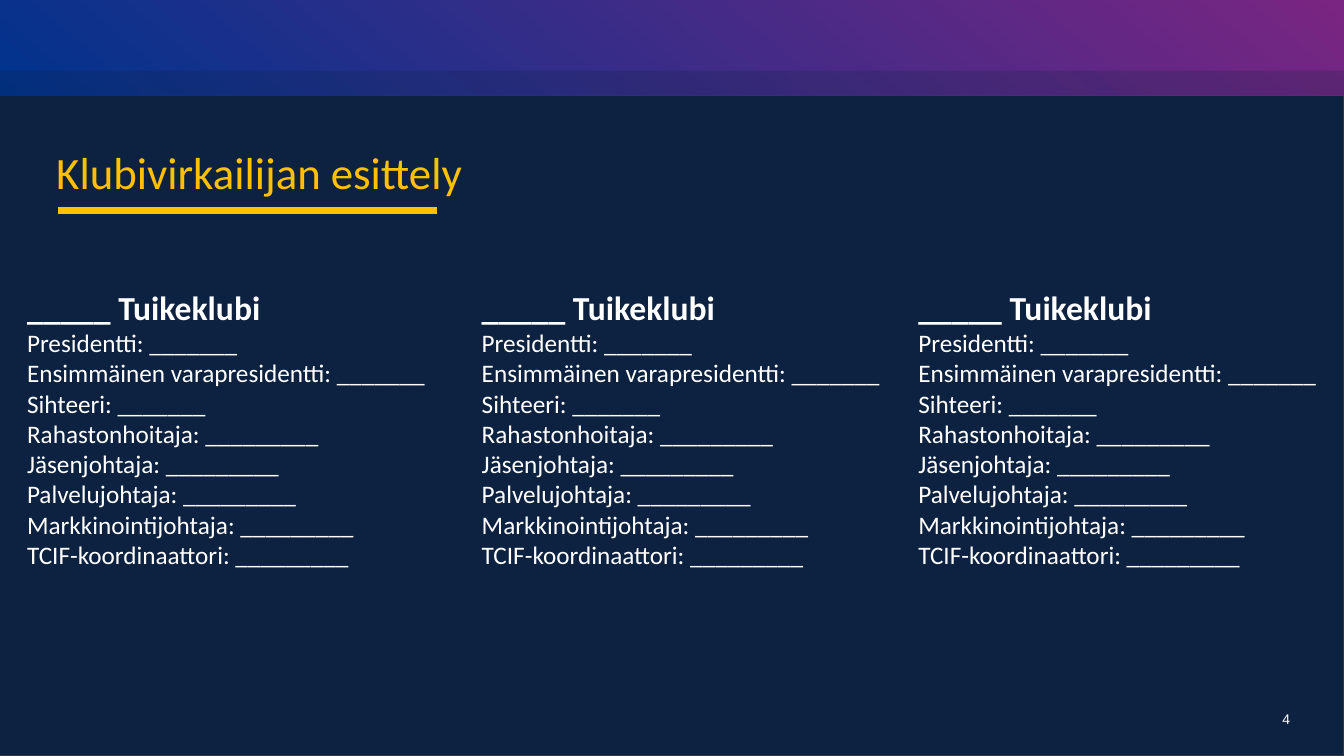
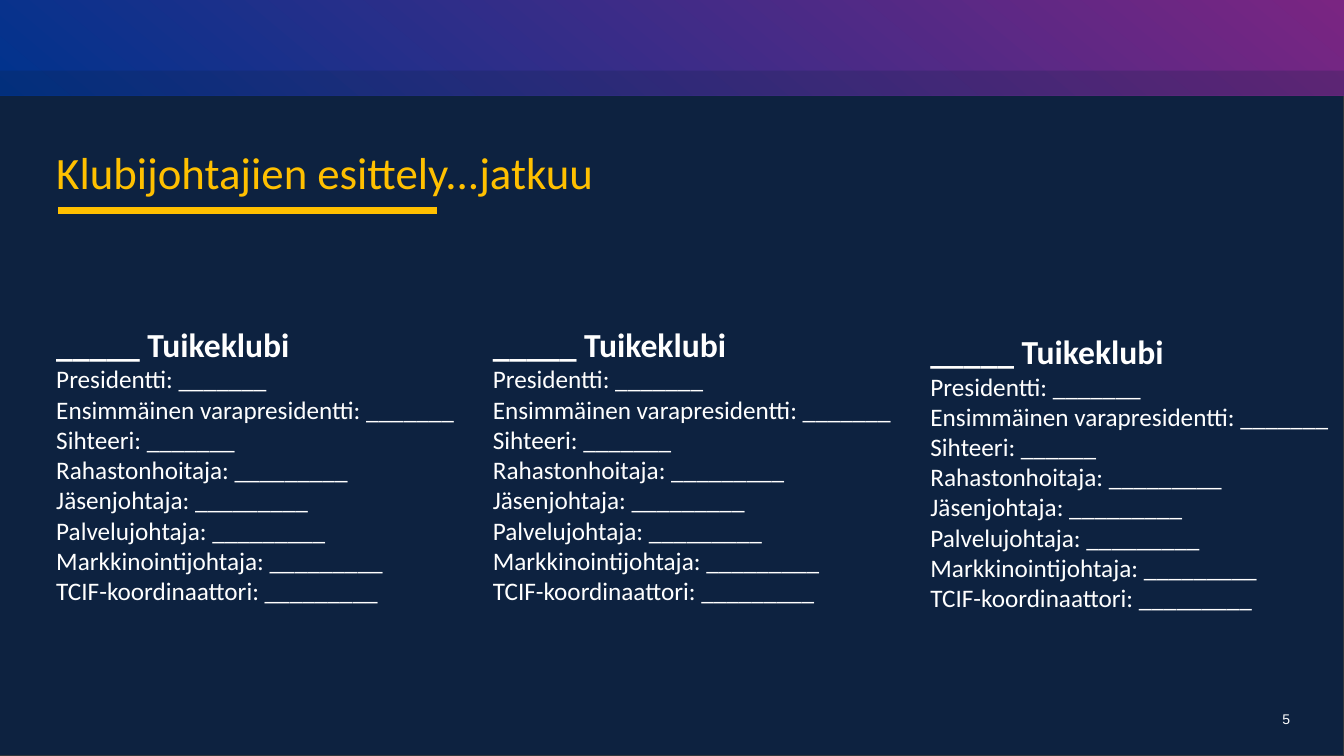
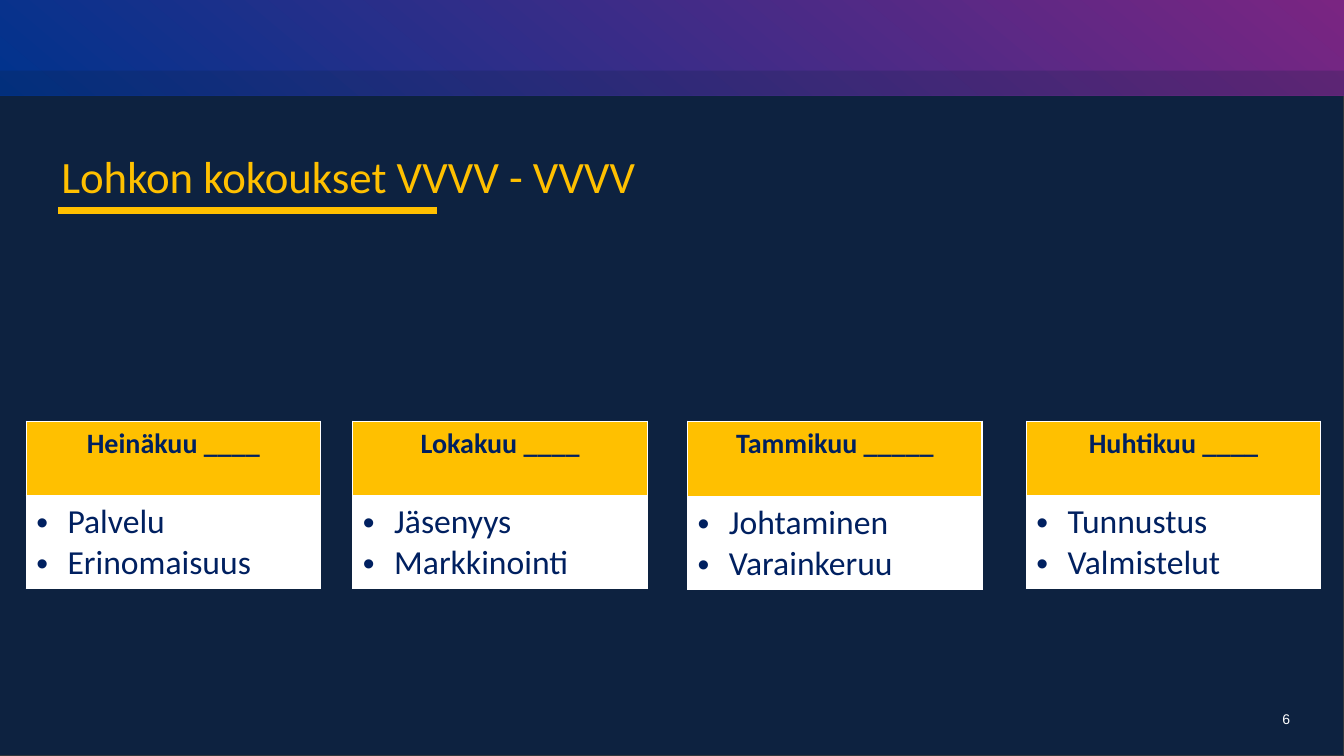
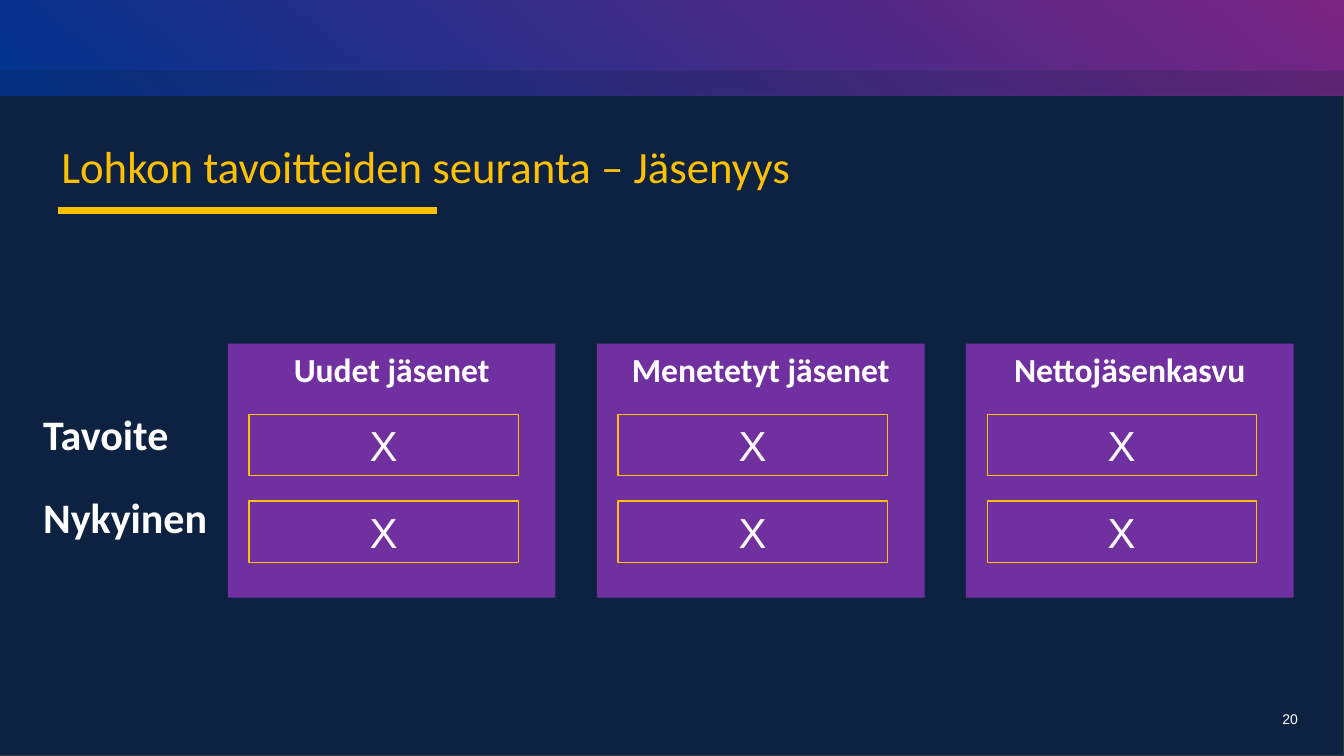
from dataclasses import dataclass
from typing import Optional

from lxml import etree
from pptx import Presentation
from pptx.dml.color import RGBColor
from pptx.enum.shapes import MSO_CONNECTOR, MSO_SHAPE
from pptx.enum.text import MSO_ANCHOR, MSO_AUTO_SIZE, PP_ALIGN
from pptx.oxml.ns import qn
from pptx.util import Pt

RECT = MSO_SHAPE.RECTANGLE
STRAIGHT = MSO_CONNECTOR.STRAIGHT
TOP, MIDDLE = MSO_ANCHOR.TOP, MSO_ANCHOR.MIDDLE
FIT = MSO_AUTO_SIZE.SHAPE_TO_FIT_TEXT
NO_FIT = MSO_AUTO_SIZE.NONE
LEFT, CENTER = PP_ALIGN.LEFT, PP_ALIGN.CENTER

PX = 9144
SLIDE_W, SLIDE_H = 1333, 750
NAVY, EDGE, BLUE, PLUM = "0D2240", "33373B", "00338D", "7A2582"
GOLD, WHITE, INK, PURPLE = "FFC000", "FFFFFF", "002060", "7030A0"
SANS, BODY = "Arial", "Calibri"

CLUB = "_____ Tuikeklubi"
ROSTER_W, ROSTER_H = 417, 293
CARD_TOP, CARD_W, CARD_BODY_H = 418, 292, 91
PANEL_LEFT, PANEL_TOP, PANEL_W, PANEL_H, PANEL_STEP = 226, 341, 325, 252, 366
GOAL_TOP, GOAL_STEP, LABEL_OFFSET = 411, 86, -11
GOAL_INSET, GOAL_W, GOAL_H = 21, 267, 61


@dataclass
class Style:
    size: int
    color: str = WHITE
    font: str = BODY
    bold: bool = False
    align: PP_ALIGN = LEFT


@dataclass
class Box:
    left: int
    top: int
    width: int
    height: int

    def emu(self) -> list[int]:
        return [px(v) for v in (self.left, self.top, self.width, self.height)]


@dataclass
class Roster:
    left: int
    top: int
    secretary_blanks: int = 7


@dataclass
class Meeting:
    left: int
    month: str
    topics: tuple[str, ...]
    header_height: int = 75


TITLE = Style(32, GOLD)
NUMBER = Style(10, font=SANS)
CLUB_NAME = Style(24, bold=True)
OFFICER = Style(18)
MONTH = Style(20, INK, bold=True, align=CENTER)
TOPIC = Style(24, INK)
GOAL_LABEL = Style(30, bold=True)
PANEL_HEAD = Style(24, bold=True, align=CENTER)
GOAL_VALUE = Style(30, font=SANS, align=CENTER)

MEETINGS = (
    Meeting(26, "Heinäkuu ____", ("Palvelu", "Erinomaisuus")),
    Meeting(350, "Lokakuu ____", ("Jäsenyys", "Markkinointi")),
    Meeting(682, "Tammikuu _____", ("Johtaminen", "Varainkeruu"), 76),
    Meeting(1018, "Huhtikuu ____", ("Tunnustus", "Valmistelut")),
)
GOALS = ("Tavoite", "Nykyinen")
PANELS = ("Uudet jäsenet", "Menetetyt jäsenet", "Nettojäsenkasvu")


def px(value: int) -> int:
    return value * PX


def rgb(color: str) -> RGBColor:
    return RGBColor.from_string(color)


def write(tf, lines: list[tuple[str, Style]]) -> None:
    tf.text = "\n".join(text for text, _ in lines)
    for p, (_, style) in zip(tf.paragraphs, lines):
        p.alignment = style.align
        for r in p.runs:
            r.font.size = Pt(style.size)
            r.font.name = style.font
            r.font.bold = style.bold
            r.font.color.rgb = rgb(style.color)


def add_text(slide, box: Box, *lines: tuple[str, Style], fit=FIT) -> None:
    tf = slide.shapes.add_textbox(*box.emu()).text_frame
    tf.word_wrap = True
    tf.auto_size = fit
    write(tf, list(lines))


def add_rect(slide, box: Box, fill: Optional[str] = None,
             line: Optional[str] = None):
    sp = slide.shapes.add_shape(RECT, *box.emu())
    sp.shadow.inherit = False
    if fill:
        sp.fill.solid()
        sp.fill.fore_color.rgb = rgb(fill)
    else:
        sp.fill.background()
    if line:
        sp.line.color.rgb = rgb(line)
        sp.line.width = Pt(0.75)
    else:
        sp.line.fill.background()
    return sp


def add_rect_text(slide, box: Box, text: str, style: Style, anchor,
                  fill: Optional[str] = None,
                  line: Optional[str] = None) -> None:
    tf = add_rect(slide, box, fill, line).text_frame
    tf.word_wrap = True
    tf.vertical_anchor = anchor
    write(tf, [(text, style)])


def add_band(slide) -> None:
    sp = add_rect(slide, Box(0, 0, SLIDE_W, 95))
    sp.fill.gradient()
    sp.fill.gradient_angle = 50
    for stop, position, color in zip(sp.fill.gradient_stops, (0, 1), (BLUE, PLUM)):
        stop.position = position
        stop.color.rgb = rgb(color)
    shade = add_rect(slide, Box(0, 70, SLIDE_W, 25), NAVY)
    color = shade._element.spPr.find(qn("a:solidFill"))[0]
    etree.SubElement(color, qn("a:alpha"), val="21000")


def add_rule(slide) -> None:
    rule = slide.shapes.add_connector(STRAIGHT, px(58), px(209), px(433), px(209))
    rule.line.color.rgb = rgb(GOLD)
    rule.line.width = Pt(4.5)
    etree.SubElement(rule._element.spPr, qn("a:effectLst"))


def add_base(prs, number: int, title: str, left: int, top: int):
    slide = prs.slides.add_slide(prs.slide_layouts[6])
    add_rect(slide, Box(0, 0, SLIDE_W, SLIDE_H), NAVY, EDGE)
    add_band(slide)
    add_text(slide, Box(1262, 700, 71, 50), (str(number), NUMBER), fit=NO_FIT)
    add_text(slide, Box(left, top, 850, 64), (title, TITLE))
    add_rule(slide)
    return slide


def add_roster(slide, roster: Roster) -> None:
    officers = (
        ("Presidentti", 7),
        ("Ensimmäinen varapresidentti", 7),
        ("Sihteeri", roster.secretary_blanks),
        ("Rahastonhoitaja", 9),
        ("Jäsenjohtaja", 9),
        ("Palvelujohtaja", 9),
        ("Markkinointijohtaja", 9),
        ("TCIF-koordinaattori", 9),
    )
    lines = [(f"{role}: {'_' * blanks}", OFFICER) for role, blanks in officers]
    add_text(slide, Box(roster.left, roster.top, ROSTER_W, ROSTER_H),
             (CLUB, CLUB_NAME), *lines)


def add_border(cell, side: str, width: float) -> None:
    ln = etree.SubElement(cell._tc.get_or_add_tcPr(), qn(f"a:ln{side}"),
                          w=str(Pt(width)))
    fill = etree.SubElement(ln, qn("a:solidFill"))
    etree.SubElement(fill, qn("a:srgbClr"), val=WHITE)


def style_cell(cell, fill: str, bottom: float) -> None:
    for side, width in (("L", 1), ("R", 1), ("T", 1), ("B", bottom)):
        add_border(cell, side, width)
    cell.fill.solid()
    cell.fill.fore_color.rgb = rgb(fill)


def add_bullet(p) -> None:
    pPr = p._p.get_or_add_pPr()
    pPr.set("marL", str(px(31)))
    pPr.set("indent", str(px(-31)))
    etree.SubElement(pPr, qn("a:buFont"), typeface=SANS)
    etree.SubElement(pPr, qn("a:buChar"), char="•")


def add_meeting(slide, meeting: Meeting) -> None:
    box = Box(meeting.left, CARD_TOP, CARD_W, meeting.header_height + CARD_BODY_H)
    table = slide.shapes.add_table(2, 1, *box.emu()).table
    table.first_row = table.horz_banding = False
    table.rows[0].height = px(meeting.header_height)
    table.rows[1].height = px(CARD_BODY_H)
    header, body = table.cell(0, 0), table.cell(1, 0)
    style_cell(header, GOLD, 3)
    style_cell(body, WHITE, 1)
    write(header.text_frame, [(meeting.month, MONTH)])
    write(body.text_frame, [(topic, TOPIC) for topic in meeting.topics])
    for p in body.text_frame.paragraphs:
        add_bullet(p)


def add_panel(slide, left: int, heading: str) -> None:
    add_rect_text(slide, Box(left, PANEL_TOP, PANEL_W, PANEL_H), heading,
                  PANEL_HEAD, TOP, fill=PURPLE)
    for row in range(len(GOALS)):
        box = Box(left + GOAL_INSET, GOAL_TOP + row * GOAL_STEP, GOAL_W, GOAL_H)
        add_rect_text(slide, box, "X", GOAL_VALUE, MIDDLE, line=GOLD)


def build_rosters(prs, number: int, title: str, rosters: list[Roster]) -> None:
    slide = add_base(prs, number, title, 46, 139)
    for roster in rosters:
        add_roster(slide, roster)


def build_meetings(prs) -> None:
    slide = add_base(prs, 6, "Lohkon kokoukset VVVV - VVVV", 51, 143)
    for meeting in MEETINGS:
        add_meeting(slide, meeting)


def build_goals(prs) -> None:
    slide = add_base(prs, 20, "Lohkon tavoitteiden seuranta – Jäsenyys", 51, 133)
    for row, label in enumerate(GOALS):
        top = GOAL_TOP + LABEL_OFFSET + row * (GOAL_STEP - 3)
        add_text(slide, Box(33, top, 193, GOAL_H), (label, GOAL_LABEL))
    for col, heading in enumerate(PANELS):
        add_panel(slide, PANEL_LEFT + col * PANEL_STEP, heading)


def main() -> None:
    prs = Presentation()
    prs.slide_width, prs.slide_height = px(SLIDE_W), px(SLIDE_H)
    build_rosters(prs, 4, "Klubivirkailijan esittely",
                  [Roster(17, 280), Roster(468, 280), Roster(901, 280)])
    build_rosters(prs, 5, "Klubijohtajien esittely...jatkuu",
                  [Roster(46, 316), Roster(479, 316), Roster(913, 323, 6)])
    build_meetings(prs)
    build_goals(prs)
    prs.save("out.pptx")


if __name__ == "__main__":
    main()
